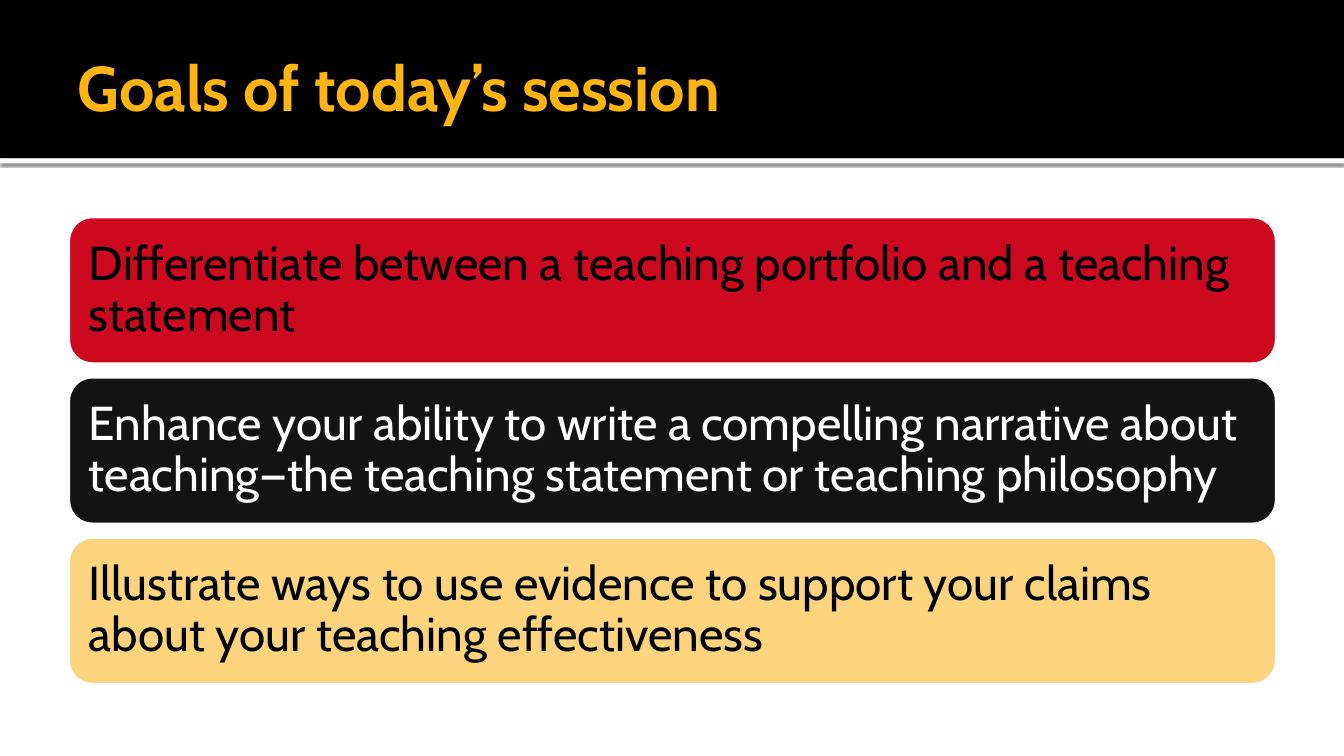
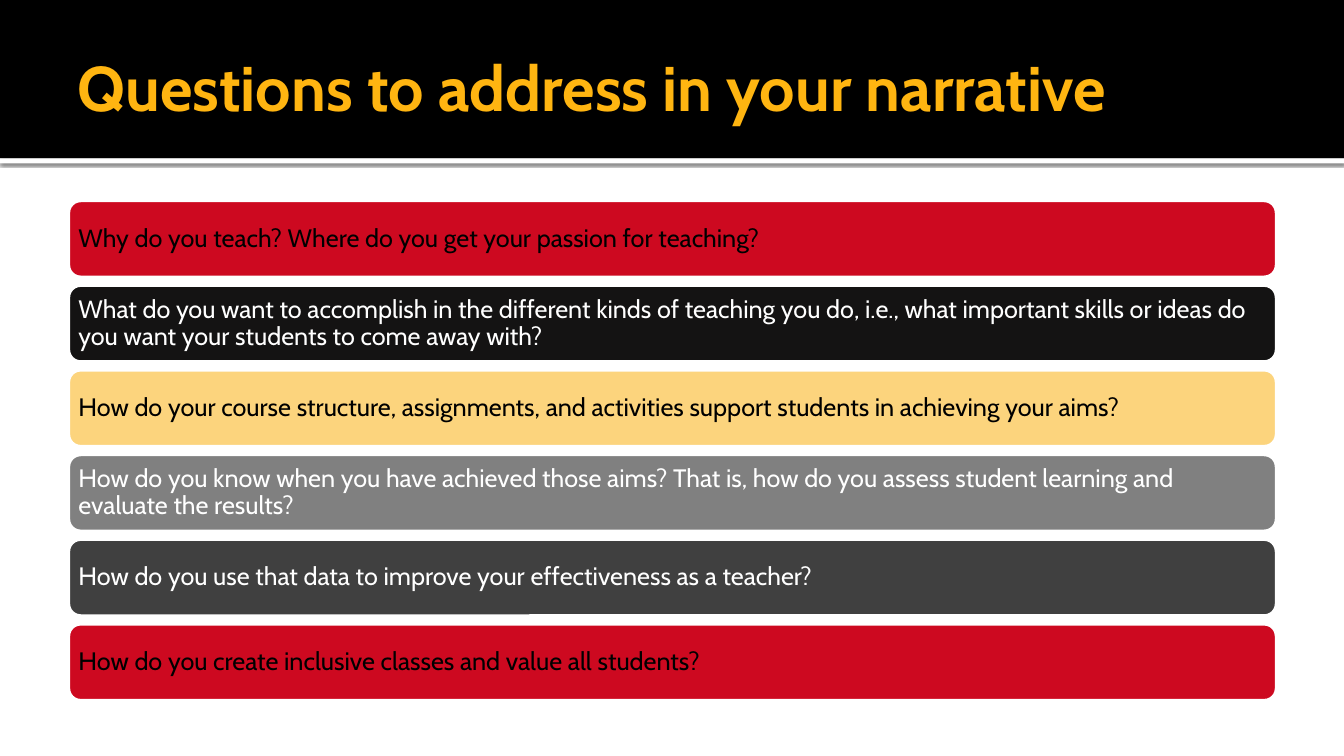
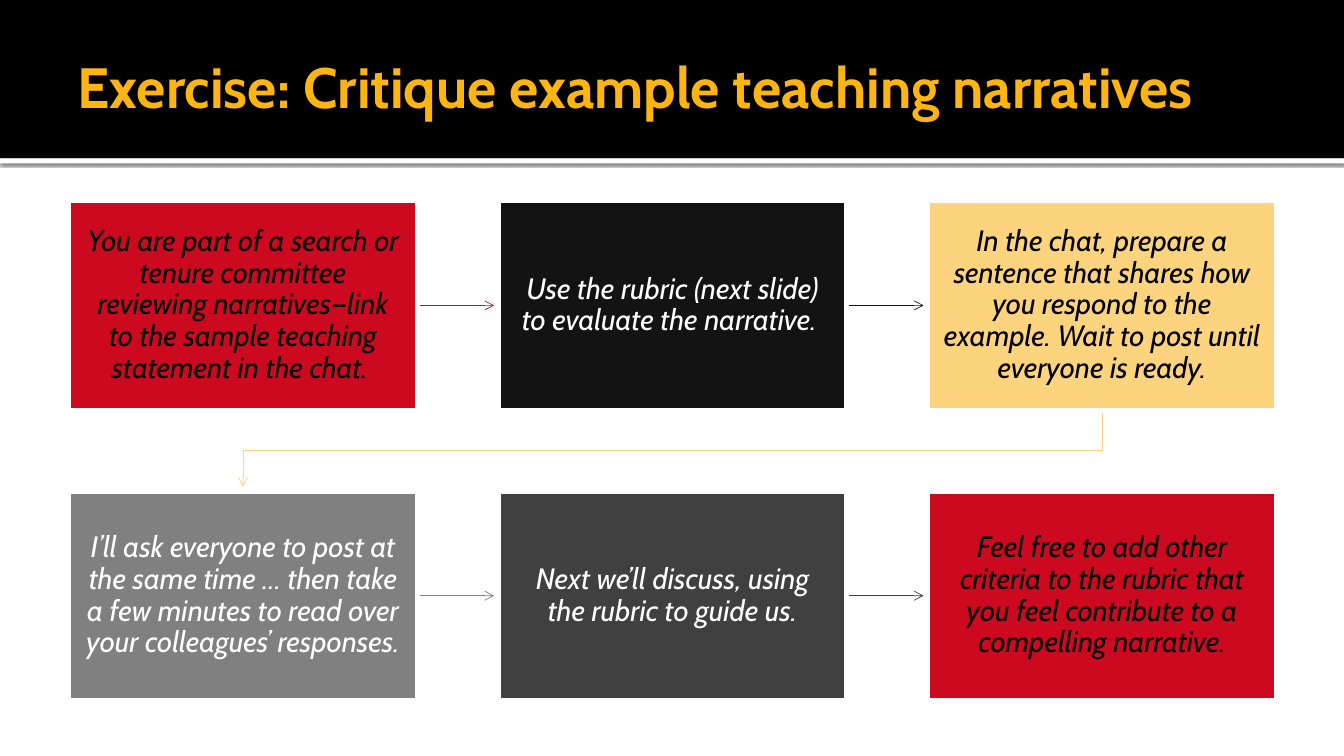
from lxml import etree
from pptx import Presentation
from pptx import util as u
from pptx.dml.color import RGBColor
from pptx.enum import shapes, text
from pptx.oxml import ns

SCALE = 9144  # EMU in one px, 100 px to the inch
FONT = "Cabin"
COLORS = {
    "black": "000000", "white": "FFFFFF", "gold": "FFB511", "red": "CD0920",
    "ink": "141313", "sand": "FCD47D", "gray": "808080", "dark": "404040",
}
FILLS = ["red", "ink", "sand", "gray", "dark"]  # cycled over the items
LIGHT_ON = {"ink", "gray", "dark"}  # fills that carry white text
SLIDE = (1333, 750)
TITLE_BOX = (67, 17, 1200, 137)

GOALS = [
    "Differentiate between a teaching portfolio and a teaching statement",
    "Enhance your ability to write a compelling narrative about teaching—the "
    "teaching statement or teaching philosophy",
    "Illustrate ways to use evidence to support your claims about your "
    "teaching effectiveness",
]
QUESTIONS = [
    "Why do you teach? Where do you get your passion for teaching?",
    "What do you want to accomplish in the different kinds of teaching you do, "
    "i.e., what important skills or ideas do you want your students to come "
    "away with?",
    "How do your course structure, assignments, and activities support "
    "students in achieving your aims?",
    "How do you know when you have achieved those aims? That is, how do you "
    "assess student learning and evaluate the results?",
    "How do you use that data to improve your effectiveness as a teacher?",
    "How do you create inclusive classes and value all students?",
]
STEPS = [
    "You are part of a search or tenure committee reviewing narratives—link "
    "to the sample teaching statement in the chat. ",
    "Use the rubric (next slide) to evaluate the narrative. ",
    "In the chat, prepare a sentence that shares how you respond to the "
    "example. Wait to post until everyone is ready.",
    "I’ll ask everyone to post at the same time … then take a few minutes to "
    "read over your colleagues’ responses.",
    "Next we’ll discuss, using the rubric to guide us.",
    "Feel free to add other criteria to the rubric that you feel contribute "
    "to a compelling narrative.",
]


def px(*lengths):
    return [u.Emu(n * SCALE) for n in lengths]


def rgb(name):
    return RGBColor.from_string(COLORS[name])


def fill_for(i):
    return FILLS[i % len(FILLS)]


def add_xml(parent, tag, **attrs):
    return etree.SubElement(parent, ns.qn(tag), attrs)


def write(tf, words, size, color, insets, align, bold=False, italic=False):
    tf.word_wrap = True
    tf.auto_size = text.MSO_AUTO_SIZE.NONE
    tf.vertical_anchor = text.MSO_ANCHOR.MIDDLE
    tf.margin_left, tf.margin_top, tf.margin_right, tf.margin_bottom = px(*insets)
    p = tf.paragraphs[0]
    p.alignment = align
    r = p.add_run()
    r.text = words
    r.font.size, r.font.name = u.Pt(size), FONT
    r.font.bold, r.font.italic = bold, italic
    r.font.color.rgb = rgb(color)
    return p


def add_block(s, kind, box, fill, outlined=True):
    sp = s.shapes.add_shape(kind, *px(*box))
    sp.shadow.inherit = False
    sp.fill.solid()
    sp.fill.fore_color.rgb = rgb(fill)
    if outlined:
        sp.line.color.rgb = rgb("white")
        sp.line.width = u.Pt(3.78)
    else:
        sp.line.fill.background()
    return sp


def add_item(s, kind, box, words, fill, size, inset, align, italic=False):
    sp = add_block(s, kind, box, fill)
    color = "white" if fill in LIGHT_ON else "black"
    p = write(sp.text_frame, words, size, color, [inset] * 4, align, italic=italic)
    p.line_spacing = 0.9


def add_bands(s, layout):
    """Move the header band and its shadowed rule to the shared layout."""
    rect = shapes.MSO_SHAPE.RECTANGLE
    rule = add_block(s, rect, (0, 157, SLIDE[0], 5), "white", outlined=False)
    effects = rule.element.spPr.find(ns.qn("a:effectLst"))
    shadow = add_xml(effects, "a:outerShdw", blurRad="31750", dist="10160",
                     dir="5400000", algn="tl", rotWithShape="0")
    tint = add_xml(shadow, "a:srgbClr", val=COLORS["black"])
    add_xml(tint, "a:alpha", val="60000")
    band = add_block(s, rect, (0, 0, SLIDE[0], 157), "black", outlined=False)
    for i, sp in enumerate((rule, band)):
        layout.shapes.element.insert(2 + i, sp.element)


def add_titled_slide(prs, title, size=45):
    s = prs.slides.add_slide(prs.slide_layouts[5])
    sp = s.shapes.title
    sp.left, sp.top, sp.width, sp.height = px(*TITLE_BOX)
    write(sp.text_frame, title, size, "gold", (10, 5, 5, 5),
          text.PP_ALIGN.LEFT, bold=True)
    return s


def add_rows(s, box, items, gap, size, inset):
    """Stack full-width rounded rows, evenly spaced in the box."""
    x, y, w, h = box
    row_h = (h - gap * (len(items) - 1)) // len(items)
    for i, words in enumerate(items):
        add_item(s, shapes.MSO_SHAPE.ROUNDED_RECTANGLE,
                 (x, y + i * (row_h + gap), w, row_h), words, fill_for(i),
                 size, inset, text.PP_ALIGN.LEFT)


def style_arrow(arrow, color):
    arrow.line.color.rgb = rgb(color)
    arrow.line.width = u.Pt(0.5)
    add_xml(arrow.line._get_or_add_ln(), "a:tailEnd", type="arrow")
    add_xml(arrow.element.spPr, "a:effectLst")


def add_straight_arrow(s, start, end, color):
    arrow = s.shapes.add_connector(shapes.MSO_CONNECTOR.STRAIGHT,
                                   *px(*start, *end))
    style_arrow(arrow, color)


def add_bent_arrow(s, start, end, color):
    bend = start[1] + 40
    fb = s.shapes.build_freeform(*start, scale=SCALE)
    fb.add_line_segments([(start[0], bend), (end[0], bend), end], close=False)
    arrow = fb.convert_to_shape()
    arrow.fill.background()
    style_arrow(arrow, color)


def add_flow(s, box, items, cols, gap_x, gap_y):
    """Lay steps out row by row, each with an arrow to the next."""
    x, y, w, h = box
    rows = math_rows = -(-len(items) // cols)
    step_w = (w - gap_x * (cols - 1)) // cols
    step_h = (h - gap_y * (rows - 1)) // math_rows
    short = 4  # arrows stop this far before the next step
    for i, words in enumerate(items):
        row, col = divmod(i, cols)
        left, top = x + col * (step_w + gap_x), y + row * (step_h + gap_y)
        right, middle = left + step_w, top + step_h // 2
        if i < len(items) - 1:
            if col < cols - 1:
                add_straight_arrow(s, (right, middle),
                                   (right + gap_x - short, middle), fill_for(i))
            else:
                add_bent_arrow(s, (left + step_w // 2, top + step_h),
                               (x + step_w // 2, top + step_h + gap_y - short),
                               fill_for(i))
        add_item(s, shapes.MSO_SHAPE.RECTANGLE, (left, top, step_w, step_h),
                 words, fill_for(i), 21, 16, text.PP_ALIGN.CENTER, italic=True)


def main():
    prs = Presentation()
    prs.slide_width, prs.slide_height = px(*SLIDE)

    # Goals
    s = add_titled_slide(prs, "Goals of today’s session")
    add_bands(s, prs.slide_layouts[5])
    add_rows(s, (67, 214, 1200, 466), GOALS, gap=11, size=34, inset=14)

    # Questions
    s = add_titled_slide(prs, "Questions to address in your narrative")
    add_rows(s, (67, 198, 1200, 498), QUESTIONS, gap=6, size=18, inset=7)

    # Exercise
    s = add_titled_slide(prs, "Exercise: Critique example teaching narratives", 40.5)
    add_flow(s, (68, 199, 1198, 496), STEPS, cols=3, gap_x=80, gap_y=80)

    prs.save("out.pptx")


if __name__ == "__main__":
    main()
